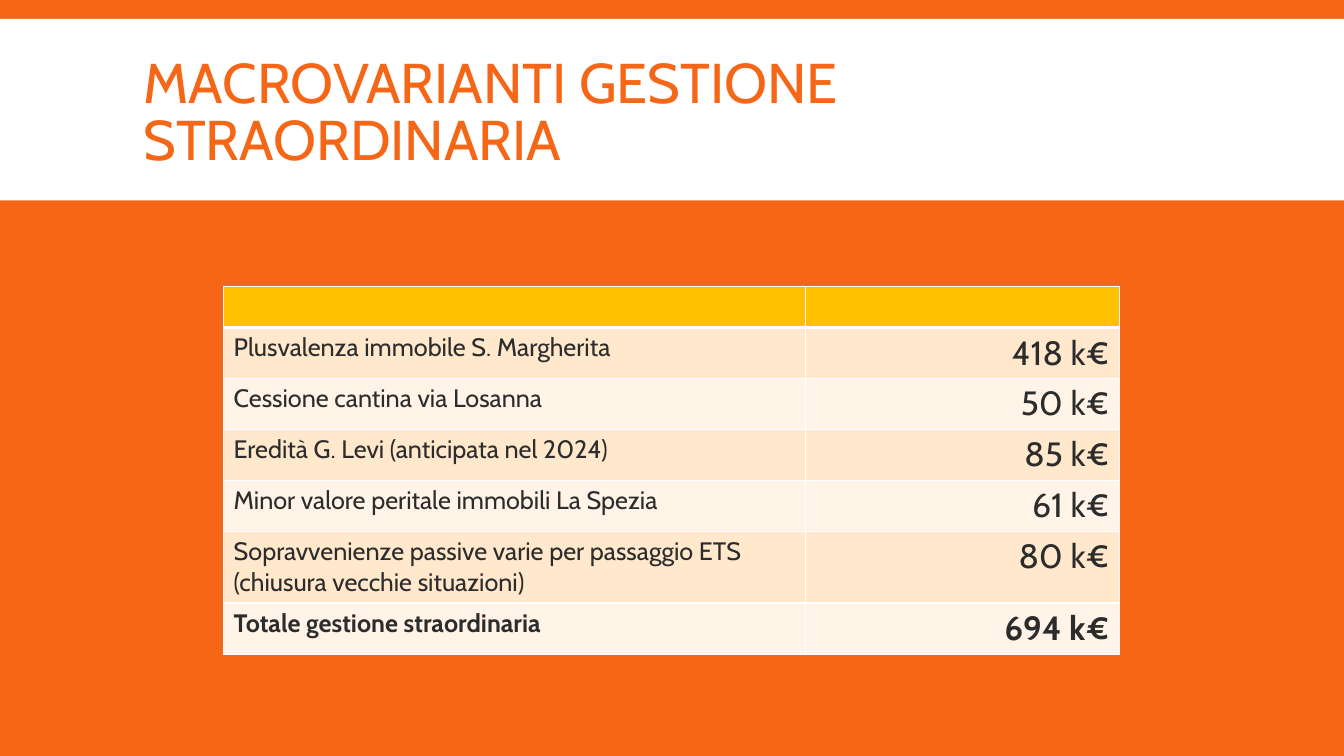
from dataclasses import dataclass

from lxml import etree
from pptx import Presentation
from pptx.dml.color import RGBColor
from pptx.enum.shapes import MSO_SHAPE
from pptx.enum.text import MSO_ANCHOR, MSO_AUTO_SIZE, PP_ALIGN
from pptx.oxml.ns import qn
from pptx.util import Pt

RECTANGLE = MSO_SHAPE.RECTANGLE
MIDDLE = MSO_ANCHOR.MIDDLE
NO_AUTOFIT = MSO_AUTO_SIZE.NONE
LEFT, RIGHT = PP_ALIGN.LEFT, PP_ALIGN.RIGHT
PX = 9525  # EMU per pixel, on a slide of 1280 by 720


@dataclass(frozen=True)
class Theme:
    font: str = "Cabin"
    orange: str = "F56617"
    white: str = "FFFFFF"
    text: str = "2C2C2C"
    header: str = "FFC000"
    bands: tuple = ("FFE8CC", "FFF4E7")
    title_size: int = 40
    label_size: int = 18
    amount_size: int = 24


THEME = Theme()


def add_text(paragraph, text, size, color, bold=False):
    run = paragraph.add_run()
    run.text = text
    run.font.name = THEME.font
    run.font.size = Pt(size)
    run.font.bold = bold
    run.font.color.rgb = RGBColor.from_string(color)


def style_cell(cell, fill, top, bottom):
    properties = cell._tc.get_or_add_tcPr()
    for side, width in (("L", 1), ("R", 1), ("T", top), ("B", bottom)):
        border = etree.SubElement(properties, qn(f"a:ln{side}"), w=str(Pt(width)))
        solid = etree.SubElement(border, qn("a:solidFill"))
        etree.SubElement(solid, qn("a:srgbClr"), val=THEME.white)
    cell.fill.solid()
    cell.fill.fore_color.rgb = RGBColor.from_string(fill)


# Slide and background
deck = Presentation()
deck.slide_width, deck.slide_height = 1280 * PX, 720 * PX
slide = deck.slides.add_slide(deck.slide_layouts[5])
slide.background.fill.solid()
slide.background.fill.fore_color.rgb = RGBColor.from_string(THEME.orange)

# White band behind the title
title = slide.shapes.title
title_band = slide.shapes.add_shape(RECTANGLE, 0, 18 * PX, 1280 * PX, 173 * PX)
title_band.shadow.inherit = False
title_band.fill.solid()
title_band.fill.fore_color.rgb = RGBColor.from_string(THEME.white)
title_band.line.fill.background()
title._element.addprevious(title_band._element)

# Title
title.left, title.top, title.width, title.height = 127 * PX, 30 * PX, 1027 * PX, 158 * PX
title.text_frame.word_wrap = True
title.text_frame.auto_size = NO_AUTOFIT
title.text_frame.vertical_anchor = MIDDLE
heading = title.text_frame.paragraphs[0]
heading.alignment = LEFT
heading.line_spacing = 0.85
add_text(heading, "MACROVARIANTI GESTIONE STRAORDINARIA", THEME.title_size, THEME.orange)

# Table contents: label, amount, row height
items = [
    ("", "", 39),
    ("Plusvalenza immobile S. Margherita", "418 k€", 48),
    ("Cessione cantina via Losanna", "50 k€", 48),
    ("Eredità G. Levi (anticipata nel 2024)", "85 k€", 48),
    ("Minor valore peritale immobili La Spezia", "61 k€", 48),
    ("Sopravvenienze passive varie per passaggio ETS (chiusura vecchie situazioni)", "80 k€", 67),
    ("Totale gestione straordinaria", "694 k€", 48),
]
table_height = sum(height for _, _, height in items)
variants = slide.shapes.add_table(
    len(items), 2, 213 * PX, 273 * PX, 853 * PX, table_height * PX
).table
variants.first_row = variants.horz_banding = False
variants.columns[0].width = 554 * PX
variants.columns[1].width = 299 * PX

# Header, banded rows and bold total
for index, (label, amount, height) in enumerate(items):
    variants.rows[index].height = height * PX
    fill = THEME.bands[(index - 1) % 2] if index else THEME.header
    is_total = index == len(items) - 1
    columns = ((label, THEME.label_size, LEFT), (amount, THEME.amount_size, RIGHT))
    for column, (text, size, alignment) in enumerate(columns):
        cell = variants.cell(index, column)
        style_cell(cell, fill, top=3 if index == 1 else 1, bottom=1 if index else 3)
        if text:
            entry = cell.text_frame.paragraphs[0]
            entry.alignment = alignment
            add_text(entry, text, size, THEME.text, is_total)

deck.save("out.pptx")
